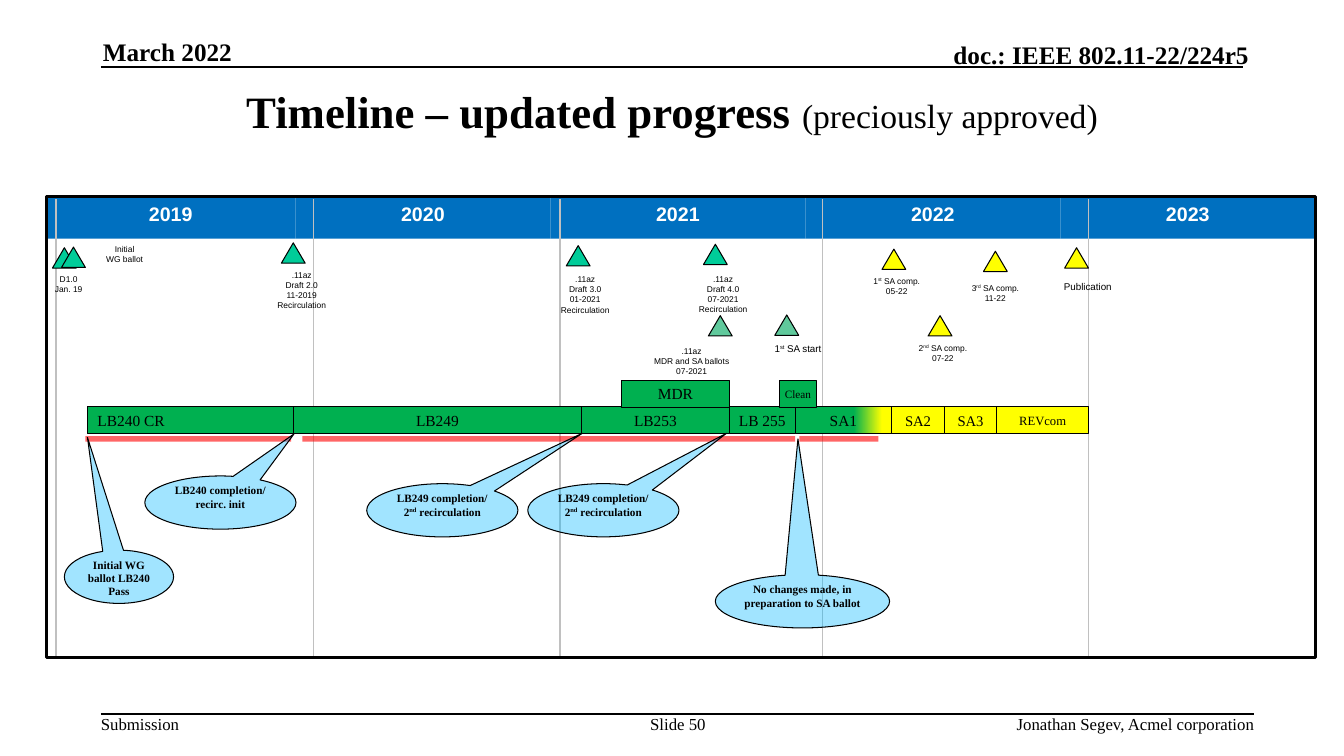
from itertools import pairwise

from pptx import Presentation
from pptx.dml.color import RGBColor
from pptx.enum.shapes import MSO_CONNECTOR, MSO_SHAPE
from pptx.enum.text import MSO_ANCHOR, PP_ALIGN
from pptx.oxml import parse_xml
from pptx.oxml.ns import nsdecls, qn
from pptx.util import Pt

BLACK = RGBColor(0x00, 0x00, 0x00)
WHITE = RGBColor(0xFF, 0xFF, 0xFF)
BLUE = RGBColor(0x00, 0x70, 0xC0)
GREY = RGBColor(0xC0, 0xC0, 0xC0)
GREEN = RGBColor(0x00, 0xB0, 0x50)
YELLOW = RGBColor(0xFF, 0xFF, 0x00)
TEAL = RGBColor(0x00, 0xCC, 0x99)
SAGE = RGBColor(0x60, 0xC9, 0x9C)
SKY = RGBColor(0x00, 0xB8, 0xFF)
RED = RGBColor(0xFF, 0x00, 0x00)
SERIF, SANS = "Times New Roman", "Arial"

# Milestone triangles: centre x, top, colour
MILESTONES = [
    (176.5, 33, TEAL), (13, 36.5, TEAL), (19.5, 36, TEAL), (380, 35, TEAL),
    (478, 34, TEAL), (481.5, 85, SAGE), (529, 84.5, SAGE), (605.5, 37.5, YELLOW),
    (638.5, 85, YELLOW), (678, 39, YELLOW), (736, 36.5, YELLOW),
]
# Milestone labels: centre x, top, width, size, text (^ encloses superscript)
LABELS = [
    (182.5, 49.5, 70, 6, ".11az\nDraft 2.0\n11-2019\nRecirculation"),
    (16, 52, 46, 6, "D1.0\nJan. 19"),
    (56, 31, 70, 6, "Initial\nWG ballot"),
    (385, 52.5, 70, 6, ".11az\nDraft 3.0\n01-2021\nRecirculation"),
    (483.5, 52, 70, 6, ".11az\nDraft 4.0\n07-2021\nRecirculation"),
    (461, 103.5, 115, 6, ".11az\nMDR and SA ballots\n07-2021"),
    (537, 101.5, 70, 7, "1^st^ SA start"),
    (607.5, 53.5, 70, 6, "1^st^ SA comp.\n05-22"),
    (640.5, 101.5, 70, 6, "2^nd^ SA comp.\n07-22"),
    (678, 58.5, 70, 6, "3^rd^ SA comp.\n11-22"),
    (744, 57, 86, 7, "Publication"),
]
# Ballots follow one another: each bar ends where the next begins
BALLOT_EDGES = [29.5, 176.5, 382.5, 488, 535, 604, 641.5, 679, 744.5]
BALLOTS = [
    ("LB240 CR", 11, GREEN), ("LB249", 11, GREEN), ("LB253", 11, GREEN),
    ("LB 255", 11, GREEN), ("SA1", 11, GREEN), ("SA2", 10.5, YELLOW),
    ("SA3", 10.5, YELLOW), ("REVcom", 9, YELLOW),
]
# Callouts: left, top, width, tip x, tip y, text
CALLOUTS = [
    (13, 252.5, 78, 29.5, 172, "Initial WG ballot LB240 Pass"),
    (70.5, 199.5, 108, 177, 169.5, "LB240 completion/\nrecirc. init"),
    (229, 205, 108, 383, 169, "LB249 completion/\n2^nd^ recirculation"),
    (344, 205, 108, 486, 169, "LB249 completion/\n2^nd^ recirculation"),
    (478, 270, 124.5, 537, 173, "No changes made, in preparation to SA ballot"),
]


def write(shape, text, size, font=SERIF, color=BLACK, bold=False,
          align=PP_ALIGN.CENTER, anchor=MSO_ANCHOR.TOP, inset=(0, 0)):
    frame = shape.text_frame
    frame.word_wrap = True
    frame.vertical_anchor = anchor
    frame.margin_left = frame.margin_right = Pt(inset[0])
    frame.margin_top = frame.margin_bottom = Pt(inset[1])
    frame.text = text.replace("^", "")
    for para, line in zip(frame.paragraphs, text.split("\n")):
        para.alignment = align
        pieces = line.split("^")
        para.runs[0].text = pieces[0]
        for _ in pieces[1:]:
            para.add_run()
        for index, (span, piece) in enumerate(zip(para.runs, pieces)):
            span.text = piece
            span.font.name, span.font.size = font, Pt(size)
            span.font.bold, span.font.color.rgb = bold, color
            if index % 2:
                span.font._element.set("baseline", "30000")


def add_text(page, left, top, width, height, text, size, **style):
    box = page.shapes.add_textbox(Pt(left), Pt(top), Pt(width), Pt(height))
    write(box, text, size, **style)
    return box


def add_block(page, kind, left, top, width, height, fill=None, line=BLACK, weight=0.75):
    shape = page.shapes.add_shape(kind, Pt(left), Pt(top), Pt(width), Pt(height))
    shape.shadow.inherit = False
    if fill is None:
        shape.fill.background()
    else:
        shape.fill.solid()
        shape.fill.fore_color.rgb = fill
    if line is None:
        shape.line.fill.background()
    else:
        shape.line.color.rgb, shape.line.width = line, Pt(weight)
    return shape


def add_line(page, x1, y1, x2, y2, color, weight):
    line = page.shapes.add_connector(MSO_CONNECTOR.STRAIGHT, Pt(x1), Pt(y1), Pt(x2), Pt(y2))
    line.line.color.rgb, line.line.width = color, Pt(weight)
    line._element.spPr.append(parse_xml(f"<a:effectLst {nsdecls('a')}/>"))
    return line


def set_opacity(shape, percent):
    color = next(shape._element.spPr.iter(qn("a:srgbClr")))
    color.append(parse_xml(f'<a:alpha {nsdecls("a")} val="{percent * 1000}"/>'))


def add_header(page, left, top, width):
    add_line(page, left, top + 22, left + width, top + 22, BLACK, 1)
    add_text(page, left + 1.5, top, 196.5, 21.5, "March 2022", 18, bold=True,
             align=PP_ALIGN.LEFT, anchor=MSO_ANCHOR.BOTTOM)
    add_text(page, left + 453, top + 2, 367, 21.5, "doc.: IEEE 802.11-22/224r5", 18,
             bold=True, align=PP_ALIGN.RIGHT, anchor=MSO_ANCHOR.BOTTOM)


def add_title(page, left, top, width, height):
    box = add_text(page, left, top, width, height, "Timeline – updated progress ", 32,
                   bold=True, anchor=MSO_ANCHOR.MIDDLE, inset=(7.2, 3.6))
    span = box.text_frame.paragraphs[0].add_run()
    span.text = "(preciously approved)"
    span.font.name, span.font.size = SERIF, Pt(24)
    span.font.bold, span.font.color.rgb = False, BLACK


def add_footer(page, left, top, width):
    add_line(page, left, top, left + width, top, BLACK, 1)
    add_text(page, left, top, 60, 14.5, "Submission", 12, align=PP_ALIGN.LEFT)
    add_text(page, left + 384.5, top, 55.5, 14.5, "Slide 50", 12)
    add_text(page, left + width - 334, top, 334, 14.5, "Jonathan Segev, Acmel corporation",
             12, align=PP_ALIGN.RIGHT)


def add_calendar(page, left, top, width, height):
    # Year bands: the first is slightly narrower than the rest
    first = 178
    step = (width - first) / 4
    edges = [0] + [first + step * index for index in range(5)]
    for year, (start, end) in enumerate(pairwise(edges), 2019):
        band = add_block(page, MSO_SHAPE.RECTANGLE, left + start, top, end - start, 30, BLUE, None)
        write(band, str(year), 14, font=SANS, color=WHITE, bold=True, inset=(7.2, 3.6))
    add_block(page, MSO_SHAPE.RECTANGLE, left, top, width, height, weight=2)
    for x in (7, 191, 367, 554.5, 744.5):
        add_line(page, left + x, top + 2, left + x, top + height - 1, GREY, 1)


def add_milestones(page, left, top):
    for x, y, color in MILESTONES:
        add_block(page, MSO_SHAPE.ISOSCELES_TRIANGLE, left + x - 8.5, top + y, 17, 14.5, color)
    for x, y, width, size, text in LABELS:
        height = 6 + 1.17 * size * len(text.split("\n"))
        add_text(page, left + x - width / 2, top + y, width, height, text, size,
                 font=SANS, inset=(6.5, 3))


def add_ballots(page, left, top):
    # Progress strokes under the bars
    for start, end in ((28, 175), (183, 535), (538, 594.5)):
        stroke = add_line(page, left + start, top + 173, left + end, top + 173, RED, 4)
        set_opacity(stroke, 60)
    # Main row, then the two bars above it
    bars = [(start, 150, end - start, *ballot)
            for (start, end), ballot in zip(pairwise(BALLOT_EDGES), BALLOTS)]
    bars += [(411, 131, 77, "MDR", 11, GREEN), (524, 131, 26, "Clean", 8, GREEN)]
    for x, y, width, text, size, color in bars:
        bar = add_block(page, MSO_SHAPE.RECTANGLE, left + x, top + y, width, 19.5, color)
        is_first = text == "LB240 CR"
        write(bar, text, size, anchor=MSO_ANCHOR.MIDDLE,
              align=PP_ALIGN.LEFT if is_first else PP_ALIGN.CENTER,
              inset=(7.2 if is_first else 0, 0))
        if text == "SA1":
            bar.fill.gradient()
            bar.fill.gradient_angle = 0
            for stop, shade, position in zip(bar.fill.gradient_stops, (GREEN, YELLOW), (0.61, 0.9)):
                stop.color.rgb, stop.position = shade, position


def add_callouts(page, left, top):
    height = 38
    for x, y, width, tip_x, tip_y, text in CALLOUTS:
        bubble = add_block(page, MSO_SHAPE.OVAL_CALLOUT, left + x, top + y, width, height, SKY)
        bubble.adjustments[0] = (tip_x - x) / width - 0.5
        bubble.adjustments[1] = (tip_y - y) / height - 0.5
        set_opacity(bubble, 37)
        write(bubble, text, 8, bold=True)


def main():
    deck = Presentation()
    deck.slide_width, deck.slide_height = Pt(960), Pt(540)
    page = deck.slides.add_slide(deck.slide_layouts[6])
    add_header(page, 72, 26, 816)
    add_title(page, 72, 54, 816, 50)
    add_calendar(page, 33, 140.5, 906.5, 329)
    add_ballots(page, 33, 140.5)
    add_callouts(page, 33, 140.5)
    add_milestones(page, 33, 140.5)
    add_footer(page, 72, 510, 824)
    deck.save("out.pptx")


if __name__ == "__main__":
    main()
